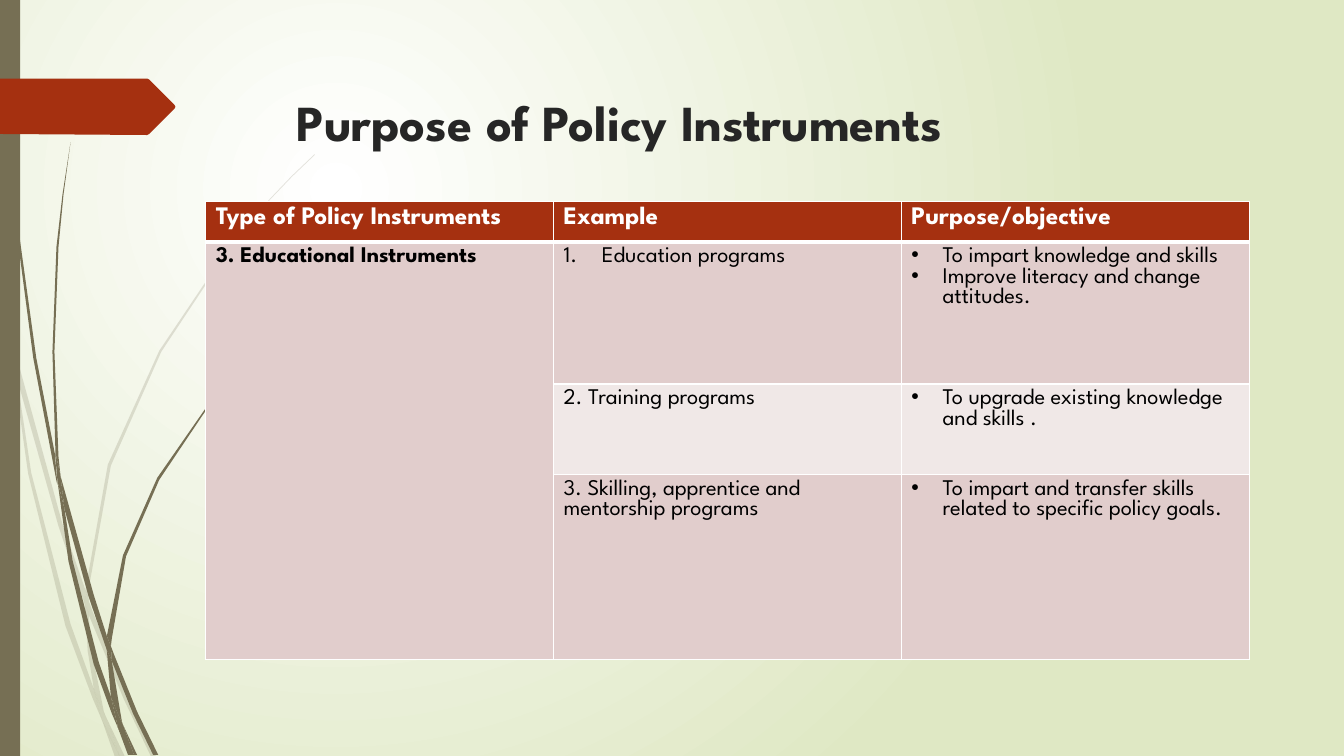
from lxml.etree import SubElement
from pptx import Presentation
from pptx.dml.color import RGBColor
from pptx.enum.shapes import MSO_SHAPE
from pptx.oxml import parse_xml
from pptx.oxml.ns import nsdecls, qn
from pptx.util import Inches, Pt

FONT = "League Spartan"
OLIVE, RUST, WHITE, INK, BLACK = "766F54", "A53010", "FFFFFF", "262626", "000000"
ROSE, PALE, GREEN = "E1CDCC", "F0E8E7", "DFE8C4"

TITLE = "Purpose of Policy Instruments"
HEADERS = ["Type of Policy Instruments", "Example", "Purpose/objective"]
INSTRUMENT = "3. Educational Instruments"
# example, whether it is auto-numbered, purposes, row fill
PROGRAMS = [
    ("Education programs", True,
     ["To impart knowledge and skills", "Improve literacy and change attitudes."], ROSE),
    ("2. Training programs", False,
     ["To upgrade existing knowledge and skills ."], PALE),
    ("3. Skilling, apprentice and mentorship programs", False,
     ["To impart and transfer skills related to specific policy goals."], ROSE),
]
COL_WIDTH = 3.45
ROW_HEIGHTS = [0.4, 1.41, 0.9, 1.83]

# Outlines of the grass blades, in inches
FAINT_BLADES = [
    [(0.11, 3.5), (0.09, 3.22), (0, 2.82), (0, 2.99), (0.1, 3.44)],
    [(0.58, 5.22), (0.84, 5.99), (0.85, 5.86), (0.62, 5.2), (0.14, 3.45), (0.17, 3.76)],
    [(0.92, 6.07), (0.88, 5.96), (0.88, 6.1), (1.23, 6.94), (1.5, 7.51), (1.55, 7.51),
     (1.27, 6.92)],
    [(1.19, 7.51), (1.24, 7.51), (1.05, 7.11)],
    [(0.93, 6.83), (0.7, 6.19), (0.31, 4.69), (0.17, 3.76), (0.11, 3.5), (0.28, 4.7),
     (0.65, 6.21), (0.92, 6.93), (1.01, 7.14), (0.99, 7.07)],
    [(0.84, 5.99), (0.87, 6.46), (0.93, 6.83), (0.96, 6.92), (1.05, 7.11), (1.03, 7.06),
     (0.91, 6.46), (0.88, 6.1), (0.88, 6.08)],
    [(0.88, 5.84), (1.1, 4.62), (1.6, 3.49), (2.29, 2.45), (2.68, 1.98), (2.9, 1.75),
     (3.12, 1.54), (3.12, 1.53), (2.89, 1.75), (2.68, 1.97), (2.28, 2.44), (1.58, 3.48),
     (1.07, 4.61), (0.85, 5.84), (0.85, 5.86), (0.88, 5.96)],
    [(1.01, 7.14), (1.14, 7.51), (1.19, 7.51)],
    [(0.88, 6.08), (0.88, 6.1), (0.88, 5.96), (0.85, 5.86), (0.84, 5.99)],
    [(0.96, 6.92), (0.93, 6.83), (0.99, 7.07), (1.01, 7.14), (1.19, 7.51), (1.05, 7.11)],
]
DARK_BLADES = [
    [(0.07, 1.1), (0.17, 2.33), (0.33, 3.55), (0.56, 4.77), (0.57, 4.81), (0.55, 4.57),
     (0.55, 4.53), (0.36, 3.55), (0.19, 2.32), (0.08, 1.09), (0.05, 0.48), (0.04, 0),
     (0.03, 0), (0.04, 0.48)],
    [(0.88, 5.92), (1.06, 6.45), (1.06, 6.33), (1.06, 6.31), (0.93, 5.9), (0.6, 4.72),
     (0.64, 5.05)],
    [(1.13, 6.49), (1.1, 6.41), (1.11, 6.56), (1.32, 7.08), (1.52, 7.49), (1.57, 7.49),
     (1.36, 7.06)],
    [(1.1, 6.91), (0.98, 6.57), (0.72, 5.56), (0.64, 5.05), (0.57, 4.77), (0.68, 5.57),
     (0.93, 6.59), (1.11, 7.08), (1.17, 7.22), (1.16, 7.17)],
    [(0.6, 4.72), (0.58, 4.53), (0.54, 3.49), (0.58, 2.45), (0.63, 1.93), (0.7, 1.41),
     (0.62, 1.93), (0.56, 2.45), (0.52, 3.49), (0.55, 4.49)],
    [(1.33, 7.49), (1.36, 7.49), (1.22, 7.19)],
    [(0.57, 4.77), (0.64, 5.05), (0.6, 4.72), (0.55, 4.49), (0.55, 4.53)],
    [(1.11, 6.33), (1.25, 5.52), (1.58, 4.76), (2.05, 4.06), (2.31, 3.74), (2.45, 3.59),
     (2.61, 3.44), (2.6, 3.44), (2.45, 3.58), (2.31, 3.73), (2.04, 4.05), (1.56, 4.74),
     (1.22, 5.51), (1.06, 6.31), (1.1, 6.41)],
    [(1.17, 7.22), (1.27, 7.49), (1.31, 7.49)],
    [(1.06, 6.45), (1.1, 6.91), (1.16, 7.06), (1.22, 7.19), (1.21, 7.16), (1.11, 6.56),
     (1.09, 6.51)],
    [(1.06, 6.45), (1.09, 6.51), (1.11, 6.56), (1.1, 6.41), (1.06, 6.31), (1.06, 6.33)],
    [(1.16, 7.06), (1.1, 6.91), (1.16, 7.17), (1.17, 7.22), (1.3, 7.49), (1.33, 7.49),
     (1.22, 7.19)],
]
ARROW = [(0, 0.78), (1.46, 0.78), (1.48, 0.79), (1.73, 1.04), (1.74, 1.06),
         (1.73, 1.08), (1.48, 1.33), (1.46, 1.34), (0, 1.33)]


def rgb(color):
    return RGBColor.from_string(color)


def paint(sp, color, alpha=None):
    """Give a shape a plain fill, optionally with an opacity in percent."""
    sp.shadow.inherit = False
    sp.line.fill.background()
    sp.fill.solid()
    sp.fill.fore_color.rgb = rgb(color)
    if alpha is not None:
        srgb = sp.fill._xPr.find(".//" + qn("a:srgbClr"))
        SubElement(srgb, qn("a:alpha"), val=str(alpha * 1000))


def add_outline(s, points, color, alpha=None):
    start, *rest = [(Inches(x), Inches(y)) for x, y in points]
    builder = s.shapes.build_freeform(*start)
    builder.add_line_segments(rest, close=True)
    paint(builder.convert_to_shape(), color, alpha)


def write(p, text, size, color, bold=False):
    r = p.add_run()
    r.text = text
    for name, value in {"name": FONT, "size": Pt(size), "bold": bold}.items():
        setattr(r.font, name, value)
    r.font.color.rgb = rgb(color)


def add_marker(p, indent, tag, **attrs):
    """Hang a bullet or number in front of a paragraph."""
    pPr = p._p.get_or_add_pPr()
    pPr.set("marL", str(Inches(indent)))
    pPr.set("indent", str(-Inches(indent)))
    SubElement(pPr, qn(tag), **attrs)


def dress_cell(cell, fill, top, bottom):
    """Set a cell's fill and its white borders."""
    tcPr = cell._tc.get_or_add_tcPr()
    for side, width in zip("LRTB", (1, 1, top, bottom)):
        ln = SubElement(tcPr, qn("a:ln" + side), w=str(Pt(width)))
        SubElement(SubElement(ln, qn("a:solidFill")), qn("a:srgbClr"), val=WHITE)
    cell.fill.solid()
    cell.fill.fore_color.rgb = rgb(fill)


def add_background(s):
    stops = "".join(f'<a:gs pos="{pos}"><a:srgbClr val="{color}"/></a:gs>'
                    for pos, color in ((0, WHITE), (100000, GREEN)))
    s._element.cSld.insert(0, parse_xml(
        f'<p:bg {nsdecls("p", "a")}><p:bgPr><a:gradFill><a:gsLst>{stops}</a:gsLst>'
        '<a:path path="circle"><a:fillToRect l="50000" t="50000" r="100000" b="100000"/>'
        '</a:path></a:gradFill><a:effectLst/></p:bgPr></p:bg>'))


def add_policy_table(s):
    frame = s.shapes.add_table(len(ROW_HEIGHTS), len(HEADERS), Inches(2.04), Inches(2),
                               Inches(COL_WIDTH * len(HEADERS)), Inches(sum(ROW_HEIGHTS)))
    table = frame.table
    for col in table.columns:
        col.width = Inches(COL_WIDTH)
    for row, height in zip(table.rows, ROW_HEIGHTS):
        row.height = Inches(height)
    for cell, header in zip(table.rows[0].cells, HEADERS):
        dress_cell(cell, RUST, 1, 3)
        write(cell.text_frame.paragraphs[0], header, 18, WHITE, True)
    for i, (example, numbered, purposes, fill) in enumerate(PROGRAMS, 1):
        kind, sample, purpose = table.rows[i].cells
        for cell in (kind, sample, purpose):
            dress_cell(cell, ROSE if cell is kind else fill, 3 if i == 1 else 1, 1)
        p = sample.text_frame.paragraphs[0]
        if numbered:
            add_marker(p, 0.38, "a:buAutoNum", type="arabicPeriod")
        write(p, example, 16, BLACK)
        tf = purpose.text_frame
        for j, text in enumerate(purposes):
            p = tf.add_paragraph() if j else tf.paragraphs[0]
            add_marker(p, 0.31, "a:buChar", char="•")
            write(p, text, 16, BLACK)
    table.cell(1, 0).merge(table.cell(len(PROGRAMS), 0))
    write(table.cell(1, 0).text_frame.paragraphs[0], INSTRUMENT, 16, BLACK, True)


def main():
    prs = Presentation()
    prs.slide_width, prs.slide_height = Inches(13.33), Inches(7.5)
    s = prs.slides.add_slide(prs.slide_layouts[6])
    add_background(s)
    for blade in FAINT_BLADES:
        add_outline(s, blade, OLIVE, 20)
    for blade in DARK_BLADES:
        add_outline(s, blade, OLIVE)
    paint(s.shapes.add_shape(MSO_SHAPE.RECTANGLE, 0, 0, Inches(0.2), prs.slide_height), OLIVE)
    add_outline(s, ARROW, RUST)
    tf = s.shapes.add_textbox(Inches(2.84), Inches(0.68), Inches(9.75), Inches(1.4)).text_frame
    tf.word_wrap = True
    tf.margin_top = Inches(0.22)
    write(tf.paragraphs[0], TITLE, 36, INK, True)
    add_policy_table(s)
    prs.save("out.pptx")


if __name__ == "__main__":
    main()
